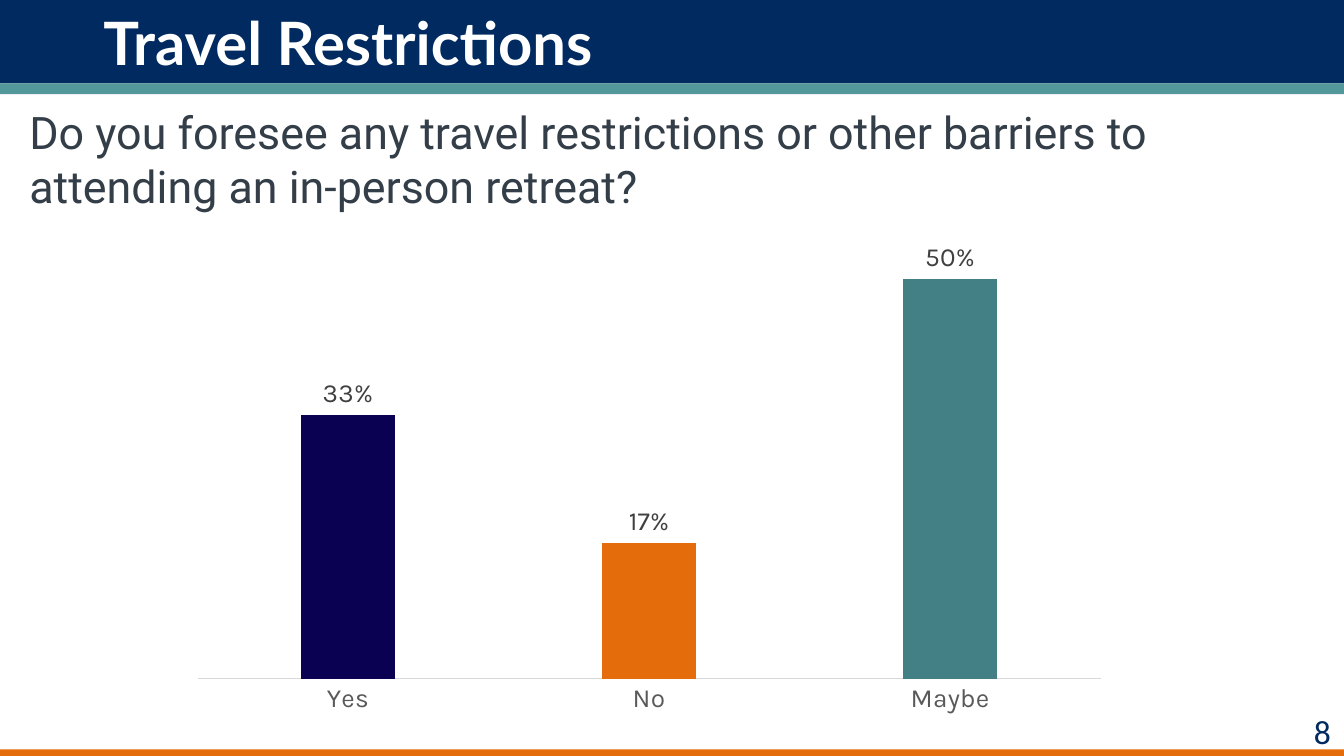
from lxml.etree import SubElement
from pptx import Presentation
from pptx.chart.data import CategoryChartData
from pptx.dml.color import RGBColor
from pptx.enum.chart import XL_CHART_TYPE, XL_LABEL_POSITION, XL_TICK_MARK
from pptx.enum.shapes import MSO_SHAPE
from pptx.enum.text import MSO_ANCHOR, PP_ALIGN
from pptx.oxml.ns import qn
from pptx.util import Inches, Pt

NAVY = RGBColor(0x01, 0x2A, 0x60)
TEAL = RGBColor(0x54, 0x97, 0x9A)
ORANGE = RGBColor(0xE4, 0x6C, 0x0A)
WHITE = RGBColor(0xFF, 0xFF, 0xFF)
SLATE = RGBColor(0x33, 0x3E, 0x48)
INDIGO = RGBColor(0x0B, 0x01, 0x53)
DEEP_TEAL = RGBColor(0x43, 0x80, 0x86)
LABEL_GRAY = RGBColor(0x40, 0x40, 0x40)
AXIS_GRAY = RGBColor(0x59, 0x59, 0x59)
RULE_GRAY = RGBColor(0xD9, 0xD9, 0xD9)

COLUMNS = 100
ANSWERS = {
    "Yes": (0.33, INDIGO),
    "No": (0.17, ORANGE),
    "Maybe": (0.5, DEEP_TEAL),
}


def apply_format(target, values):
    for attribute, value in values.items():
        setattr(target, attribute, value)


class SurveySlide:
    title = {"name": "Lato", "size": Pt(32), "bold": True}
    question = {"name": "Roboto", "size": Pt(24)}
    number = {"name": "Calibri", "size": Pt(18)}
    chart_text = {"name": "Karla", "size": Pt(14)}

    def __init__(self, deck):
        self.cell = deck.slide_width / COLUMNS
        self.rows = deck.slide_height / self.cell
        self.slide = deck.slides.add_slide(deck.slide_layouts[6])

    def place(self, *cells):
        return [round(cell * self.cell) for cell in cells]

    def style(self, font, values, color):
        apply_format(font, values)
        font.color.rgb = color

    def band(self, top, height, color):
        bar = self.slide.shapes.add_shape(
            MSO_SHAPE.RECTANGLE, *self.place(0, top, COLUMNS, height)
        )
        bar.shadow.inherit = False
        bar.fill.solid()
        bar.fill.fore_color.rgb = color
        bar.line.fill.background()

    def text(self, words, area, font, color, anchor=MSO_ANCHOR.TOP,
             align=PP_ALIGN.LEFT, indent=0):
        frame = self.slide.shapes.add_textbox(*self.place(*area)).text_frame
        apply_format(frame, {"word_wrap": True, "vertical_anchor": anchor})
        paragraph = frame.paragraphs[0]
        paragraph.alignment = align
        if indent:
            margin = str(Inches(indent))
            apply_margin = paragraph._p.get_or_add_pPr().set
            apply_margin("marL", margin)
            apply_margin("indent", "0")
        run = paragraph.add_run()
        run.text = words
        self.style(run.font, font, color)

    def column_chart(self, answers, area):
        data = CategoryChartData(number_format="0%")
        data.categories = list(answers)
        data.add_series("Series 1", [share for share, _ in answers.values()])
        chart = self.slide.shapes.add_chart(
            XL_CHART_TYPE.COLUMN_CLUSTERED, *self.place(*area), data
        ).chart
        apply_format(chart, {"has_legend": False, "has_title": False})
        apply_format(chart.font, self.chart_text)

        answer_axis = chart.category_axis
        apply_format(answer_axis, {
            "major_tick_mark": XL_TICK_MARK.NONE,
            "minor_tick_mark": XL_TICK_MARK.NONE,
            "has_major_gridlines": False,
        })
        self.style(answer_axis.tick_labels.font, self.chart_text, AXIS_GRAY)
        answer_axis.format.line.color.rgb = RULE_GRAY
        answer_axis.format.line.width = Pt(0.75)
        apply_format(chart.value_axis, {
            "visible": False,
            "has_major_gridlines": False,
            "minimum_scale": 0,
            "maximum_scale": 0.6,
        })

        plot = chart.plots[0]
        apply_format(plot, {
            "gap_width": 219, "overlap": -27, "vary_by_categories": False,
        })
        shares = plot.series[0]
        shares.format.fill.solid()
        shares.format.fill.fore_color.rgb = INDIGO
        for index, (_, color) in enumerate(answers.values()):
            fill = shares.points[index].format.fill
            fill.solid()
            fill.fore_color.rgb = color
        labels = shares.data_labels
        apply_format(labels, {
            "show_value": True,
            "position": XL_LABEL_POSITION.OUTSIDE_END,
            "number_format": "0%",
            "number_format_is_linked": False,
        })
        self.style(labels.font, self.chart_text, LABEL_GRAY)


def main():
    deck = Presentation()
    deck.slide_width = Inches(10)
    deck.slide_height = Inches(10) * 9 // 16
    survey = SurveySlide(deck)
    survey.band(0, 6.2, NAVY)
    survey.band(6.2, 0.8, TEAL)
    survey.text("8", (94.2, 52.4, 5.8, 4), survey.number, NAVY,
                align=PP_ALIGN.RIGHT)
    survey.band(survey.rows - 0.5, 0.5, ORANGE)
    survey.text(
        "Do you foresee any travel restrictions or other barriers to "
        "attending an in-person retreat?",
        (0, 7.3, 90, 9.2), survey.question, SLATE, indent=0.12,
    )
    survey.text("Travel Restrictions", (6.7, 0, 89.5, 6.2), survey.title,
                WHITE, anchor=MSO_ANCHOR.MIDDLE)
    survey.column_chart(ANSWERS, (13.3, 14, 70, 40))
    deck.save("out.pptx")


if __name__ == "__main__":
    main()
